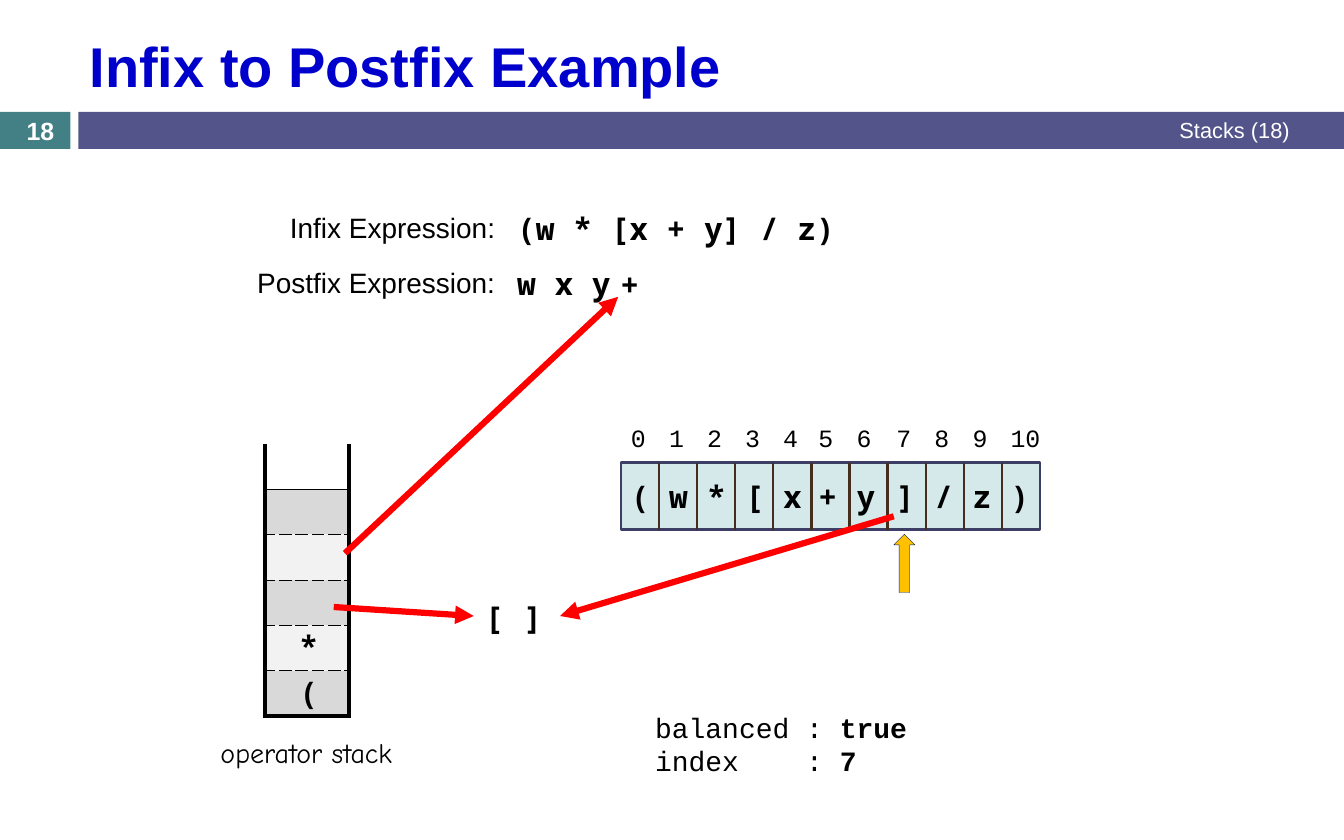
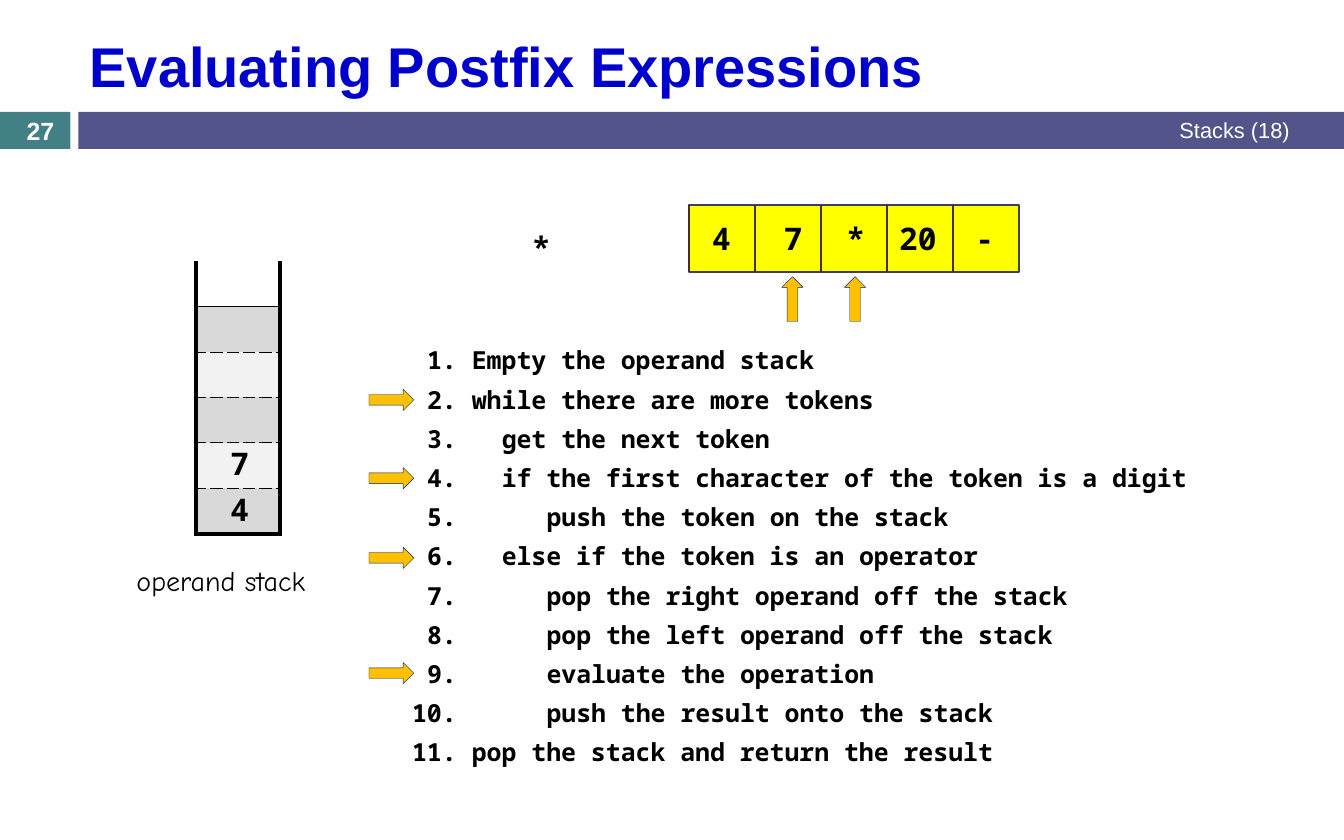
"""Build two slides on infix and postfix expressions with stacks and token rows."""
import dataclasses
import typing

import lxml.etree
import pptx
import pptx.dml.color
import pptx.enum.shapes
import pptx.enum.text
import pptx.oxml
import pptx.oxml.ns
import pptx.util

WIDTH, HEIGHT = pptx.util.Inches(12), pptx.util.Inches(7.5)
COLUMNS, ROWS = 120, 75
MONO_ADVANCE = 0.6

BLACK, WHITE, TITLE_BLUE = "000000", "FFFFFF", "0000CC"
TEAL, INDIGO = "438086", "53548A"
TOKEN_EDGE, DIVIDER = "3D3E66", "462E1F"
POINTER, POINTER_EDGE, MOVE_RED = "FFC000", "002060", "FF0000"
STACK_FILLS = [WHITE, "D9D9D9", "F2F2F2", "D9D9D9", "F2F2F2", "D9D9D9"]

ALIGN = pptx.enum.text.PP_ALIGN
ANCHOR = pptx.enum.text.MSO_ANCHOR
SHAPE = pptx.enum.shapes.MSO_SHAPE


@dataclasses.dataclass(frozen=True)
class Area:
    left: float
    top: float
    width: float
    height: float


@dataclasses.dataclass(frozen=True)
class Style:
    size: float
    font: str
    color: str = BLACK
    bold: bool = False
    align: ALIGN = ALIGN.LEFT


@dataclasses.dataclass(frozen=True)
class TokenRow:
    left: float
    top: float
    pitch: float
    fill: str
    tokens: typing.List[str]
    insets: typing.List[float]
    first_divider: int


@dataclasses.dataclass(frozen=True)
class Stack:
    left: float
    top: float
    items: typing.List[str]
    caption: str
    caption_area: Area


@dataclasses.dataclass(frozen=True)
class Move:
    start: typing.Tuple[float, float]
    end: typing.Tuple[float, float]


TITLE = Style(36, "Arial", TITLE_BLUE, True)
FOOTER = Style(14, "Arial", WHITE, align=ALIGN.RIGHT)
NUMBER = Style(16, "Arial", WHITE, True, ALIGN.CENTER)
LABEL = Style(18, "Arial", align=ALIGN.RIGHT)
TOKEN = Style(20, "Noto Sans Mono", bold=True)
STEP = Style(16, "Noto Sans Mono", bold=True)
INDEX = Style(16, "Courier New")
STATE = Style(18, "Courier New")
CAPTION = Style(18, "Comic Neue")

INFIX_ROW = TokenRow(55.45, 41.3, 3.4, "D6E9EA", list("(w*[x+y]/z)"),
                     [-0.1] * 5 + [-0.35] * 2 + [-0.2] * 4, 1)
POSTFIX_ROW = TokenRow(61.5, 18.3, 5.9, "FFFF00", ["4", "7", "*", "20", "-"],
                       [1.1, 1.6, 1.3, 0.1, 1], 0)
OPERATORS = Stack(23.65, 39.6, ["(", "*"], "operator stack", Area(18.7, 65.2, 20.2, 4))
OPERANDS = Stack(17.5, 23.3, ["4", "7"], "operand stack", Area(11.2, 49.8, 20.2, 4))
MOVES = [Move((79.8, 46.1), (50, 55)), Move((30.8, 49.4), (55.2, 26.5)),
         Move((29.8, 54.2), (42.3, 55))]
STEPS = [
    (0, "Empty the operand stack"),
    (0, "while there are more tokens"),
    (2, "get the next token"),
    (2, "if the first character of the token is a digit"),
    (5, "push the token on the stack"),
    (2, "else if the token is an operator"),
    (5, "pop the right operand off the stack"),
    (5, "pop the left operand off the stack"),
    (5, "evaluate the operation"),
    (5, "push the result onto the stack"),
    (0, "pop the stack and return the result"),
]


def col(columns: float) -> int:
    """Turn grid columns into a length."""
    return round(WIDTH * columns / COLUMNS)


def row(rows: float) -> int:
    """Turn grid rows into a length."""
    return round(HEIGHT * rows / ROWS)


def rgb(code: str) -> pptx.dml.color.RGBColor:
    """Turn a hex string into a colour."""
    return pptx.dml.color.RGBColor.from_string(code)


def box(area: Area) -> typing.Tuple[int, int, int, int]:
    """Turn a grid area into left, top, width and height."""
    return col(area.left), row(area.top), col(area.width), row(area.height)


def place(holder, area: Area) -> None:
    """Move a placeholder onto a grid area."""
    holder.left, holder.top, holder.width, holder.height = box(area)


def format_paragraph(paragraph, style: Style) -> None:
    """Apply a style to all runs of a paragraph."""
    paragraph.alignment = style.align
    for run in paragraph.runs:
        run.font.size = pptx.util.Pt(style.size)
        run.font.name = style.font
        run.font.bold = style.bold
        run.font.color.rgb = rgb(style.color)


def hang(paragraph, style: Style, character: int, first: int = 0) -> None:
    """Hang a paragraph so that its tab reaches a character column."""
    advance = pptx.util.Pt(style.size) * MONO_ADVANCE
    properties = paragraph._p.get_or_add_pPr()
    properties.set("marL", str(round(character * advance)))
    properties.set("indent", str(round((first - character) * advance)))
    lxml.etree.SubElement(properties, pptx.oxml.ns.qn("a:buNone"))


def add_text(slide, area: Area, text: str, style: Style, anchor=ANCHOR.TOP):
    """Add a wrapped text box in one style."""
    frame = slide.shapes.add_textbox(*box(area)).text_frame
    frame.word_wrap = True
    frame.vertical_anchor = anchor
    frame.text = text
    for paragraph in frame.paragraphs:
        format_paragraph(paragraph, style)
    return frame


def add_token(slide, left: float, top: float, token: str) -> None:
    """Add one bold token."""
    add_text(slide, Area(left, top, 3.4 if len(token) == 1 else 5.6, 4.4), token, TOKEN)


def add_block(slide, area: Area, fill: str, edge: str = "", weight: float = 0,
              preset=SHAPE.RECTANGLE, turn: float = 0) -> None:
    """Add a filled preset shape with an optional outline."""
    block = slide.shapes.add_shape(preset, *box(area))
    block.shadow.inherit = False
    block.rotation = turn
    block.fill.solid()
    block.fill.fore_color.rgb = rgb(fill)
    if edge:
        block.line.color.rgb = rgb(edge)
        block.line.width = pptx.util.Pt(weight)
    else:
        block.line.fill.background()


def add_pointer(slide, left: float, top: float, length: float, turn: float) -> None:
    """Add a golden block arrow turned to its direction."""
    add_block(slide, Area(left, top, 1.9, length), POINTER, POINTER_EDGE, 0.25,
              SHAPE.DOWN_ARROW, turn)


def add_line(slide, move: Move, color: str, weight: float, arrow: bool = False) -> None:
    """Add a straight line, with an arrowhead if asked for."""
    (x1, y1), (x2, y2) = move.start, move.end
    line = slide.shapes.add_connector(pptx.enum.shapes.MSO_CONNECTOR.STRAIGHT,
                                      col(x1), row(y1), col(x2), row(y2))
    line.line.color.rgb = rgb(color)
    line.line.width = pptx.util.Pt(weight)
    if arrow:
        lxml.etree.SubElement(line.line._get_or_add_ln(),
                              pptx.oxml.ns.qn("a:tailEnd"), type="triangle")
    lxml.etree.SubElement(line._element.spPr, pptx.oxml.ns.qn("a:effectLst"))


def set_borders(cell, borders: typing.Dict[str, typing.Tuple[float, str]]) -> None:
    """Give a table cell its black borders by side."""
    properties = cell._tc.get_or_add_tcPr()
    for position, side in enumerate("LRTB"):
        weight, dash = borders[side]
        paint = '<a:solidFill><a:srgbClr val="000000"/></a:solidFill>' if weight else "<a:noFill/>"
        properties.insert(position, pptx.oxml.parse_xml(
            f'<a:ln{side} {pptx.oxml.ns.nsdecls("a")} w="{pptx.util.Pt(weight)}">'
            f'{paint}<a:prstDash val="{dash}"/></a:ln{side}>'))


def add_stack(slide, stack: Stack) -> None:
    """Add a stack as an open-topped table with its items and caption."""
    depth, step = len(STACK_FILLS), 4.06
    frame = slide.shapes.add_table(
        depth, 1, *box(Area(stack.left, stack.top, 7.5, step * depth)))
    frame.table.first_row = frame.table.horz_banding = False
    wall, rim, inner = (3, "solid"), (0.5, "solid"), (0.5, "lgDash")
    edges = [(0, "solid"), rim] + [inner] * (depth - 2) + [wall]
    for level, fill in enumerate(STACK_FILLS):
        cell = frame.table.cell(level, 0)
        cell.margin_top = cell.margin_bottom = 0
        cell.fill.solid()
        cell.fill.fore_color.rgb = rgb(fill)
        set_borders(cell, {"L": wall, "R": wall, "T": edges[level], "B": edges[level + 1]})
    for level, item in enumerate(stack.items):
        add_token(slide, stack.left + 2.1, stack.top + 20 - level * 4.1, item)
    add_text(slide, stack.caption_area, stack.caption, CAPTION)


def add_token_row(slide, tokens: TokenRow) -> None:
    """Add a box of equal cells with one token in each."""
    count = len(tokens.tokens)
    add_block(slide, Area(tokens.left, tokens.top, tokens.pitch * count, 6),
              tokens.fill, TOKEN_EDGE, 1.5)
    starts = [tokens.left + index * tokens.pitch for index in range(count)]
    for x in starts[tokens.first_divider:]:
        add_line(slide, Move((x, tokens.top), (x, tokens.top + 6)), DIVIDER, 1.5)
    for x, inset, token in zip(starts, tokens.insets, tokens.tokens):
        add_token(slide, x + inset, tokens.top + 0.8, token)


def start_slide(deck, layout: int, heading: str, number: str):
    """Add a slide with its title, bands, footer and number."""
    slide = deck.slides.add_slide(deck.slide_layouts[layout])
    add_block(slide, Area(0, 10, 6.3, 3.3), TEAL)
    add_block(slide, Area(7, 10, 113, 3.3), INDIGO)
    title = slide.shapes.title
    place(title, Area(7, 1.85, 109.1, 8))
    title.text_frame.text = heading
    title.text_frame.vertical_anchor = ANCHOR.MIDDLE
    format_paragraph(title.text_frame.paragraphs[0], TITLE)
    add_text(slide, Area(61.65, 9.95, 54.5, 3.3), "Stacks (18)", FOOTER, ANCHOR.MIDDLE)
    add_text(slide, Area(0, 10.15, 7.2, 3), number, NUMBER, ANCHOR.MIDDLE)
    return slide


def build_conversion(deck) -> None:
    """Build the slide that converts infix to postfix."""
    slide = start_slide(deck, 5, "Infix to Postfix Example", "18")
    add_stack(slide, OPERATORS)
    expressions = [("Infix Expression:", "(w * [x + y] / z)"), ("Postfix Expression:", "w x y")]
    for line, (label, expression) in enumerate(expressions):
        top = 18.3 + line * 4.9
        add_text(slide, Area(19.2, top, 26, 4), label, LABEL)
        add_text(slide, Area(45.2, top - 0.1, 36, 4.4), expression, TOKEN)
    add_token_row(slide, INFIX_ROW)
    for index, inset in enumerate(INFIX_ROW.insets):
        add_text(slide, Area(INFIX_ROW.left + index * INFIX_ROW.pitch + inset, 37.25,
                             3.4 if index < 10 else 5.1, 3.7), str(index), INDEX)
    add_pointer(slide, 79.8, 47.7, 5.2, 180)
    for move in MOVES:
        add_line(slide, move, MOVE_RED, 4, True)
    for left, top, token in [(54.4, 23.2, "+"), (42.3, 52.9, "["), (45.8, 52.9, "]")]:
        add_token(slide, left, top, token)
    state = add_text(slide, Area(57.5, 62.9, 32.5, 7.1), "balanced\t: \nindex\t: ", STATE)
    for paragraph, value in zip(state.paragraphs, ["true", "7"]):
        paragraph.add_run().text = value
        format_paragraph(paragraph, STATE)
        paragraph.runs[-1].font.bold = True
        hang(paragraph, STATE, 9)


def build_evaluation(deck) -> None:
    """Build the slide that evaluates a postfix expression."""
    slide = start_slide(deck, 1, "Evaluating Postfix Expressions", "27")
    add_stack(slide, OPERANDS)
    algorithm = slide.placeholders[1]
    place(algorithm, Area(35.8, 30.3, 74.2, 39))
    frame = algorithm.text_frame
    frame.auto_size = pptx.enum.text.MSO_AUTO_SIZE.NONE
    frame.vertical_anchor = ANCHOR.TOP
    frame.text = "\n".join(f"{n}.\t{step}" for n, (_, step) in enumerate(STEPS, 1))
    for n, (paragraph, (indent, _)) in enumerate(zip(frame.paragraphs, STEPS), 1):
        format_paragraph(paragraph, STEP)
        paragraph.space_before = pptx.util.Pt(0)
        paragraph.space_after = pptx.util.Pt(6)
        hang(paragraph, STEP, 4 + indent, 1 if n < 10 else 0)
    add_token_row(slide, POSTFIX_ROW)
    add_token(slide, 46.5, 19.9, "*")
    for left in (69.8, 75.4):
        add_pointer(slide, left, 24.7, 4, 180)
    for top in (33.7, 40.7, 47.8, 58.1):
        add_pointer(slide, 34, top, 4, 270)


deck = pptx.Presentation()
deck.slide_width, deck.slide_height = WIDTH, HEIGHT
build_conversion(deck)
build_evaluation(deck)
deck.save("out.pptx")
